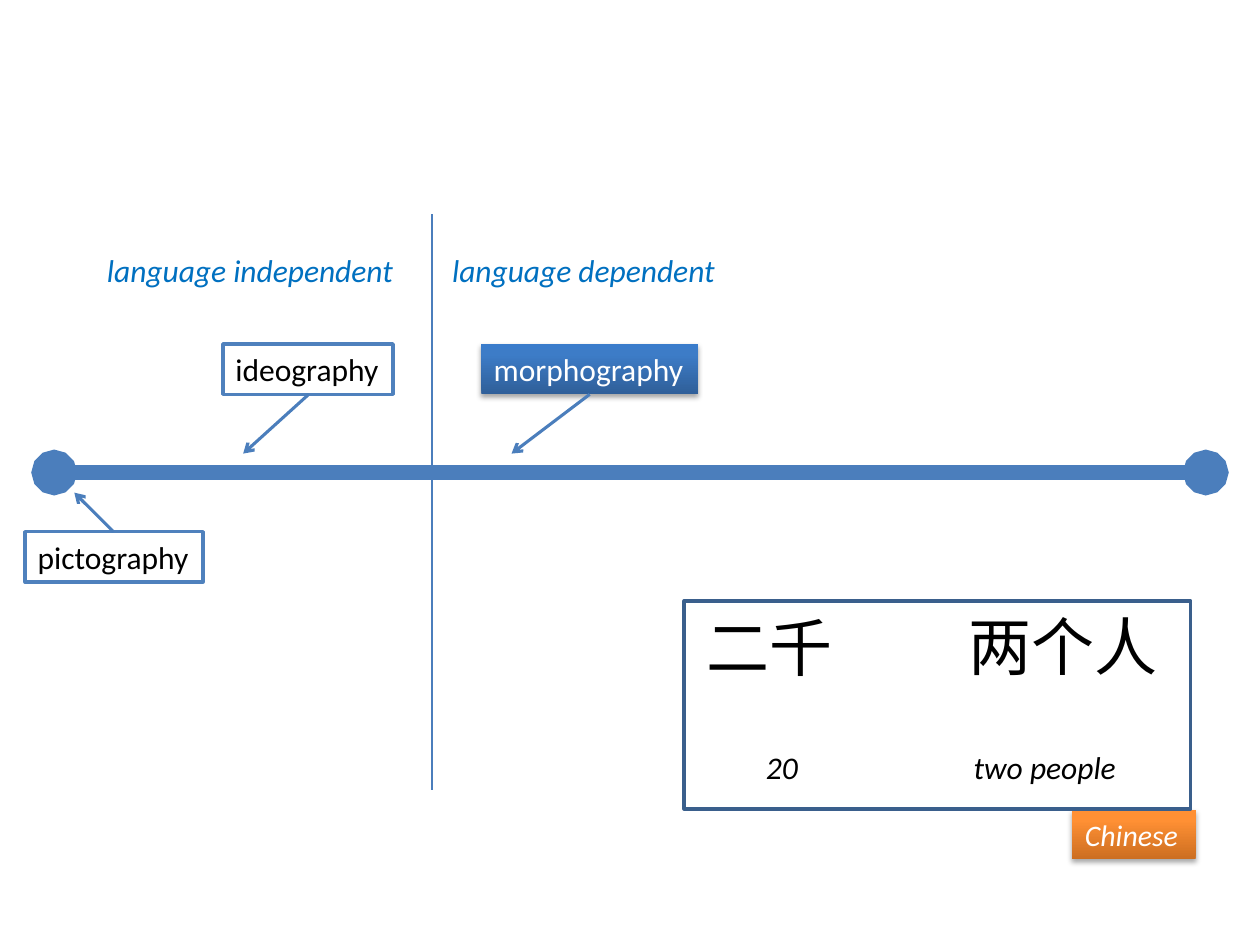
from dataclasses import dataclass
from typing import Optional

from pptx import Presentation
from pptx.dml.color import RGBColor
from pptx.enum.shapes import MSO_CONNECTOR, MSO_SHAPE
from pptx.enum.text import MSO_ANCHOR, MSO_AUTO_SIZE, PP_ALIGN
from pptx.oxml import parse_xml
from pptx.oxml.ns import nsdecls, qn
from pptx.util import Inches, Pt

RECTANGLE = MSO_SHAPE.RECTANGLE
STRAIGHT = MSO_CONNECTOR.STRAIGHT
LEFT = PP_ALIGN.LEFT
TOP = MSO_ANCHOR.TOP
FIXED_SIZE = MSO_AUTO_SIZE.NONE
GROW = MSO_AUTO_SIZE.SHAPE_TO_FIT_TEXT

FONT = "Calibri"
BLACK, WHITE = "000000", "FFFFFF"
AXIS_BLUE, BORDER_BLUE, FRAME_BLUE, HEADING_BLUE = "4B7EBC", "4F81BD", "3A5F8C", "0070C0"
BLUE_STOPS = [(0, "2F5F99"), (80, "3D7CC7"), (100, "3A7CCB")]
ORANGE_STOPS = [(0, "CC6E20"), (80, "FF9034"), (100, "FF9136")]
LABEL_HEIGHT = 0.4


@dataclass
class Category:
    """A boxed writing type with an arrow to its place on the axis."""
    name: str
    left: float
    top: float
    width: float
    arrow_start: tuple[float, float]
    arrow_tip: tuple[float, float]
    highlighted: bool = False


@dataclass
class Caption:
    text: str
    left: float
    top: float
    width: float
    height: float = LABEL_HEIGHT
    size: int = 18
    color: str = BLACK
    italic: bool = True


CATEGORIES = [
    Category("pictography", 0.2, 4.22, 1.41, (0.9, 4.22), (0.59, 3.91)),
    Category("ideography", 1.77, 2.73, 1.35, (2.45, 3.13), (1.93, 3.6)),
    Category("morphography", 3.82, 2.73, 1.72, (4.68, 3.13), (4.06, 3.6), True),
]
CAPTIONS = [
    Caption("language independent", 0.75, 1.94, 2.51, color=HEADING_BLUE),
    Caption("language dependent", 3.49, 1.94, 2.37, color=HEADING_BLUE),
    Caption(" 两个人", 7.48, 4.77, 1.83, 0.71, size=36, italic=False),
    Caption("二千", 5.51, 4.78, 1.21, 0.71, size=36, italic=False),
    Caption("20", 5.98, 5.89, 0.46),
    Caption("two people", 7.63, 5.89, 1.37),
]


def rgb(color: str) -> RGBColor:
    return RGBColor.from_string(color)


def write(shape, text: str, size: int, color: str, italic: bool = False):
    frame = shape.text_frame
    frame.word_wrap = False
    frame.auto_size = GROW
    frame.vertical_anchor = TOP
    paragraph = frame.paragraphs[0]
    paragraph.text = text
    paragraph.alignment = LEFT
    font = paragraph.font
    font.name, font.size, font.italic = FONT, Pt(size), italic
    font.color.rgb = rgb(color)
    return paragraph


def add_box(slide, left: float, top: float, width: float, height: float):
    box = slide.shapes.add_shape(
        RECTANGLE, Inches(left), Inches(top), Inches(width), Inches(height))
    box.shadow.inherit = False
    return box


def outline(shape, color: str) -> None:
    shape.line.color.rgb = rgb(color)
    shape.line.width = Pt(2)


def make_glossy(shape, stops: list[tuple[int, str]]) -> None:
    """Fill from bottom to top and cast a soft shadow downwards."""
    shape.fill.gradient()
    shape.fill.gradient_angle = 90
    shape.line.fill.background()
    shape.shadow.inherit = False
    properties = shape._element.spPr
    stop_list = properties.find(".//" + qn("a:gsLst"))
    for old_stop in list(stop_list):
        stop_list.remove(old_stop)
    for position, color in stops:
        stop_list.append(parse_xml(
            f'<a:gs {nsdecls("a")} pos="{position * 1000}"><a:srgbClr val="{color}"/></a:gs>'))
    properties.find(qn("a:effectLst")).append(parse_xml(
        f'<a:outerShdw {nsdecls("a")} blurRad="{Pt(3.1)}" dist="{Pt(1.8)}" dir="5400000" '
        'rotWithShape="0"><a:srgbClr val="000000"><a:alpha val="35000"/></a:srgbClr>'
        '</a:outerShdw>'))


def add_line(slide, start: tuple[float, float], end: tuple[float, float], width: float,
             head: Optional[str] = None, tail: Optional[str] = None) -> None:
    line = slide.shapes.add_connector(STRAIGHT, *map(Inches, start + end))
    line.line.color.rgb = rgb(AXIS_BLUE)
    line.line.width = Pt(width)
    properties = line._element.spPr
    for tag, kind in (("headEnd", head), ("tailEnd", tail)):
        if kind:
            properties.find(qn("a:ln")).append(
                parse_xml(f'<a:{tag} {nsdecls("a")} type="{kind}"/>'))
    properties.append(parse_xml(f'<a:effectLst {nsdecls("a")}/>'))


def add_category(slide, category: Category) -> None:
    box = add_box(slide, category.left, category.top, category.width, LABEL_HEIGHT)
    if category.highlighted:
        make_glossy(box, BLUE_STOPS)
    else:
        box.fill.solid()
        box.fill.fore_color.rgb = rgb(WHITE)
        outline(box, BORDER_BLUE)
    write(box, category.name, 18, WHITE if category.highlighted else BLACK)
    add_line(slide, category.arrow_start, category.arrow_tip, 1.75, tail="arrow")


def add_caption(slide, caption: Caption) -> None:
    box = slide.shapes.add_textbox(Inches(caption.left), Inches(caption.top),
                                   Inches(caption.width), Inches(caption.height))
    write(box, caption.text, caption.size, caption.color, caption.italic)


def add_language_tag(slide, language: str) -> None:
    tag = slide.placeholders[1]
    tag.left, tag.top, tag.width, tag.height = map(Inches, (8.51, 6.43, 0.98, 0.39))
    make_glossy(tag, ORANGE_STOPS)
    paragraph = write(tag, language, 17, WHITE, italic=True)
    paragraph.space_before = Pt(3.4)
    tag.text_frame.word_wrap = True
    tag.text_frame.auto_size = FIXED_SIZE


def main() -> None:
    presentation = Presentation()
    presentation.slide_width, presentation.slide_height = Inches(10), Inches(7.5)
    # Section Header layout: its body placeholder has no bullets
    slide = presentation.slides.add_slide(presentation.slide_layouts[2])
    title = slide.shapes.title._element
    title.getparent().remove(title)

    # Axis of writing types
    add_line(slide, (0.43, 3.75), (9.57, 3.75), 8.75, head="oval", tail="oval")
    for category in CATEGORIES:
        add_category(slide, category)

    # Divider between language independent and dependent
    add_line(slide, (3.43, 1.7), (3.43, 6.27), 1.25)

    # Frame of the Chinese example, then headings and example words
    example_frame = add_box(slide, 5.43, 4.77, 4.02, 1.65)
    example_frame.fill.background()
    outline(example_frame, FRAME_BLUE)
    for caption in CAPTIONS:
        add_caption(slide, caption)
    add_language_tag(slide, "Chinese")

    presentation.save("out.pptx")


if __name__ == "__main__":
    main()
